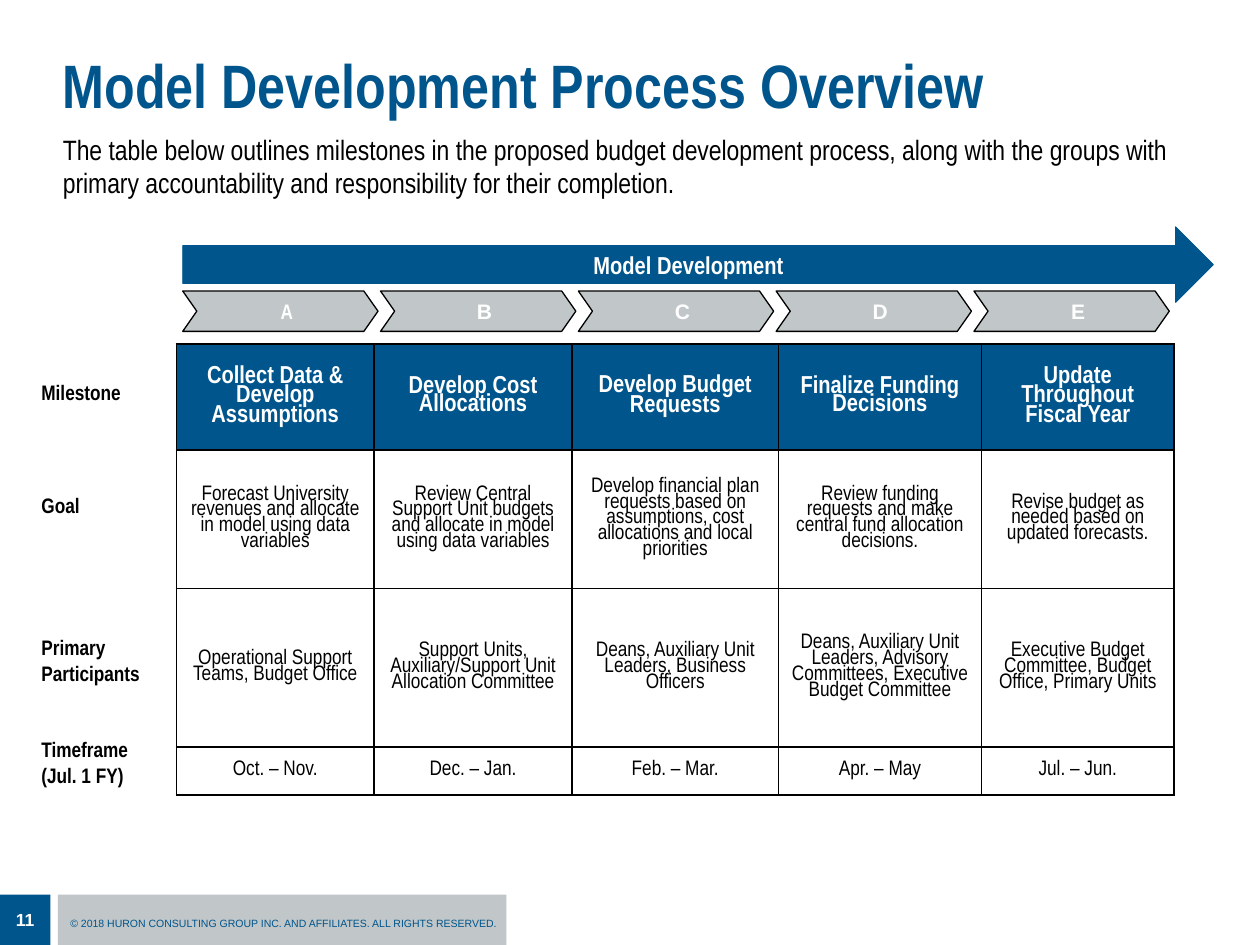
import pptx
import pptx.util
import pptx.oxml
import pptx.oxml.ns
import pptx.dml.color
import pptx.enum.shapes
import pptx.enum.text

Pt = pptx.util.Pt
SHAPE = pptx.enum.shapes.MSO_SHAPE
ALIGN = pptx.enum.text.PP_ALIGN
ANCHOR = pptx.enum.text.MSO_ANCHOR

COLORS = {"blue": "00558C", "gray": "C1C6C8", "white": "FFFFFF", "black": "000000"}
NARROW, ARIAL = "Arial Narrow", "Arial"
COLS, ROWS = 100, 75

STAGES = [
    ("Collect Data & Develop Assumptions",
     "Forecast University revenues and allocate in model using data variables",
     "Operational Support Teams, Budget Office", "Oct. – Nov."),
    ("Develop Cost Allocations",
     "Review Central Support Unit budgets and allocate in model using data variables",
     "Support Units, Auxiliary/Support Unit Allocation Committee", "Dec. – Jan."),
    ("Develop Budget Requests",
     "Develop financial plan requests based on assumptions, cost allocations and local priorities",
     "Deans, Auxiliary Unit Leaders, Business Officers", "Feb. – Mar."),
    ("Finalize Funding Decisions",
     "Review funding requests and make central fund allocation decisions.",
     "Deans, Auxiliary Unit Leaders, Advisory Committees, Executive Budget Committee",
     "Apr. – May"),
    ("Update Throughout Fiscal Year",
     "Revise budget as needed based on updated forecasts.",
     "Executive Budget Committee, Budget Office, Primary Units", "Jul. – Jun."),
]
LABELS = [(29.6, 3, ["Milestone"]), (38.6, 3, ["Goal"]),
          (49.9, 5, ["Primary Participants"]), (58, 5, ["Timeframe", "(Jul. 1 FY)"])]


def tint(name):
    return pptx.dml.color.RGBColor.from_string(COLORS[name])


class Deck:
    """Slide on a grid of 100 columns by 75 rows."""

    def __init__(self):
        self.prs = pptx.Presentation()
        self.prs.slide_width = pptx.util.Inches(10)
        self.prs.slide_height = pptx.util.Inches(7.5)
        self.slide = self.prs.slides.add_slide(self.prs.slide_layouts[6])

    def x(self, cols):
        return round(self.prs.slide_width * cols / COLS)

    def y(self, rows):
        return round(self.prs.slide_height * rows / ROWS)

    def box(self, left, top, width, height):
        return self.x(left), self.y(top), self.x(width), self.y(height)

    def words(self, frame, lines, size, color="black", bold=False, font=NARROW,
              align=ALIGN.LEFT, space=None):
        for i, line in enumerate(lines):
            para = frame.add_paragraph() if i else frame.paragraphs[0]
            para.alignment = align
            if space:
                para.line_spacing = space
            run = para.add_run()
            run.text = line
            run.font.name, run.font.size, run.font.bold = font, Pt(size), bold
            run.font.color.rgb = tint(color)

    def text(self, place, lines, size, anchor=ANCHOR.TOP, wrap=True, **style):
        frame = self.slide.shapes.add_textbox(*self.box(*place)).text_frame
        frame.word_wrap = wrap
        frame.vertical_anchor = anchor
        self.words(frame, lines, size, **style)

    def shape(self, kind, place, fill, line=None, width=0.75):
        item = self.slide.shapes.add_shape(kind, *self.box(*place))
        item.shadow.inherit = False
        item.fill.solid()
        item.fill.fore_color.rgb = tint(fill)
        if line:
            item.line.color.rgb = tint(line)
            item.line.width = Pt(width)
        else:
            item.line.fill.background()
        item.text_frame.vertical_anchor = ANCHOR.MIDDLE
        return item

    def border(self, cell, width=1):
        props = cell._tc.get_or_add_tcPr()
        space = pptx.oxml.ns.nsdecls("a")
        for i, side in enumerate(("lnL", "lnR", "lnT", "lnB")):
            props.insert(i, pptx.oxml.parse_xml(
                f'<a:{side} {space} w="{Pt(width)}"><a:solidFill>'
                f'<a:srgbClr val="{COLORS["black"]}"/></a:solidFill></a:{side}>'))

    def table(self, left, top, widths, heights, stages):
        place = self.box(left, top, sum(widths), sum(heights))
        grid = self.slide.shapes.add_table(len(heights), len(widths), *place).table
        for col, width in zip(grid.columns, widths):
            col.width = self.x(width)
        for row, height in zip(grid.rows, heights):
            row.height = self.y(height)
        for c, stage in enumerate(stages):
            for r, entry in enumerate(stage):
                head = r == 0
                cell = grid.cell(r, c)
                cell.vertical_anchor = ANCHOR.MIDDLE
                cell.fill.solid()
                cell.fill.fore_color.rgb = tint("blue" if head else "white")
                self.border(cell)
                self.words(cell.text_frame, [entry], 14 if head else 12,
                           "white" if head else "black", head, align=ALIGN.CENTER,
                           space=0.85 if head and c % 2 == 0 else 0.8)


def main():
    deck = Deck()

    deck.shape(SHAPE.RECTANGLE, (4.6, 71, 35.6, 4), "gray")
    deck.text((4.6, 72.3, 36.7, 2),
              ["© 2018 HURON CONSULTING GROUP INC. AND AFFILIATES. ALL RIGHTS RESERVED."],
              6, wrap=False, color="blue", font=ARIAL)
    page = deck.shape(SHAPE.RECTANGLE, (0, 71, 4, 4), "blue")
    deck.words(page.text_frame, ["11"], 10, "white", True, ARIAL, ALIGN.CENTER)

    deck.text((4, 4, 94.6, 5.3), ["Model Development Process Overview"], 35,
              ANCHOR.MIDDLE, color="blue", bold=True)
    deck.text((4, 10, 94.2, 8.8),
              ["The table below outlines milestones in the proposed budget development "
               "process, along with the groups with primary accountability and "
               "responsibility for their completion."], 16)

    arrow = deck.shape(SHAPE.RIGHT_ARROW, (14.5, 18, 81.8, 6), "blue", "blue", 0.5)
    deck.words(arrow.text_frame, ["Model Development"], 14, "white", True,
               align=ALIGN.CENTER)
    for i, letter in enumerate("ABCDE"):
        step = deck.shape(SHAPE.CHEVRON, (14.5 + 15.7 * i, 23.1, 15.5, 3.2),
                          "gray", "black")
        step.adjustments[0] = 0.35
        step.text_frame.margin_left = deck.x(2)
        deck.words(step.text_frame, [letter], 12, "white", True,
                   ARIAL if i else NARROW, ALIGN.CENTER)

    deck.table(14, 27.3, [15.7, 15.7, 16.4, 16.1, 15.3], [8.4, 11, 12.6, 3.8], STAGES)
    for top, height, lines in LABELS:
        deck.text((2.3, top, 12.2, height), lines, 12, bold=True)

    deck.prs.save("out.pptx")


if __name__ == "__main__":
    main()
